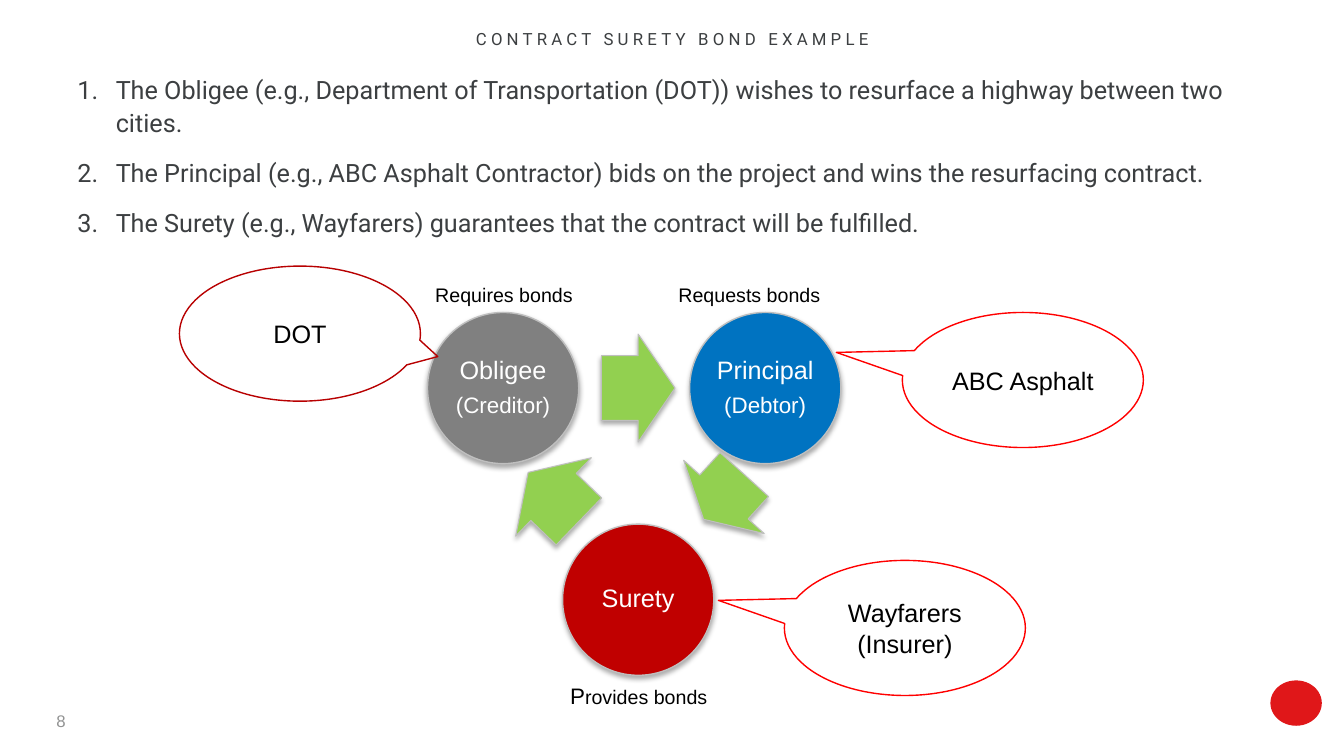
from lxml import etree
from pptx import Presentation
from pptx.dml.color import RGBColor
from pptx.enum.shapes import MSO_SHAPE as Shape
from pptx.enum.text import MSO_ANCHOR as Anchor, MSO_AUTO_SIZE as AutoSize, PP_ALIGN as Align
from pptx.oxml.ns import qn
from pptx.util import Inches, Pt

INK = RGBColor(0x3C, 0x3F, 0x41)
BLACK = RGBColor(0, 0, 0)
WHITE = RGBColor(255, 255, 255)
PAGE_GRAY = RGBColor(0x92, 0x93, 0x93)
RIM = RGBColor(0xBF, 0xBF, 0xBF)
GRAY = RGBColor(0x80, 0x80, 0x80)
BLUE = RGBColor(0x00, 0x73, 0xC1)
RED = RGBColor(0xC0, 0, 0)
GREEN = RGBColor(0x92, 0xD0, 0x50)
BRIGHT_RED = RGBColor(255, 0, 0)
DARK_RED = RGBColor(0xB8, 0, 0x01)
EMBLEM_RED = RGBColor(0xE0, 0x17, 0x19)

# Content
TITLE = "CONTRACT SURETY BOND EXAMPLE"
STEPS = [
    "The Obligee (e.g., Department of Transportation (DOT)) wishes to resurface a highway between two cities.",
    "The Principal (e.g., ABC Asphalt Contractor) bids on the project and wins the resurfacing contract.",
    "The Surety (e.g., Wayfarers) guarantees that the contract will be fulfilled.",
]
PAGE = "8"
# lines, center x, center y, fill
PARTIES = [
    (["Principal", "(Debtor)"], 7.59, 3.85, BLUE),
    (["Surety"], 6.33, 5.95, RED),
    (["Obligee", "(Creditor)"], 4.99, 3.85, GRAY),
]
# center x, center y, length, breadth, direction in degrees
ARROWS = [
    (6.33, 3.85, 0.73, 1.07, 0),
    (7.18, 4.93, 0.6, 1.08, 132.3),
    (5.49, 4.93, 0.7, 1.08, 224),
]
# text, left, top, width, height, alignment
LABELS = [
    ("Requests bonds", 6.63, 2.76, 1.93, 0.34, Align.LEFT),
    ("Provides bonds", 4.84, 6.72, 2.99, 0.37, Align.CENTER),
    ("Requires bonds", 4.19, 2.76, 1.59, 0.34, Align.RIGHT),
]
# lines, left, top, tail offset, outline
CALLOUTS = [
    (["Wayfarers", "(Insurer)"], 7.78, 5.56, (-0.774, -0.204), BRIGHT_RED),
    (["ABC Asphalt"], 8.95, 3.1, (-0.774, -0.204), BRIGHT_RED),
    (["DOT"], 1.78, 2.64, (0.572, 0.17), DARK_RED),
]
DIAMETER = 1.5
CALLOUT_W, CALLOUT_H = 2.39, 1.34

deck = Presentation()
deck.slide_width, deck.slide_height = Inches(13.33), Inches(7.5)
slide = deck.slides.add_slide(deck.slide_layouts[5])


def box(*lengths):
    return [Inches(length) for length in lengths]


def write(frame, lines, size, color, align=Align.LEFT, font="Arial"):
    frame.word_wrap = True
    frame.text = "\n".join(lines)
    for paragraph in frame.paragraphs:
        paragraph.alignment = align
        for run in paragraph.runs:
            run.font.name, run.font.size = font, Pt(size)
            run.font.color.rgb = color


def add_text(place, lines, size, color, align=Align.LEFT, font="Arial"):
    frame = slide.shapes.add_textbox(*box(*place)).text_frame
    write(frame, lines, size, color, align, font)
    return frame


def add_part(kind, center_x, center_y, width, height, fill, line_width):
    """Filled cycle part with a gray rim and a soft shadow below."""
    part = slide.shapes.add_shape(
        kind, *box(center_x - width / 2, center_y - height / 2, width, height))
    part.fill.solid()
    part.fill.fore_color.rgb = fill
    part.line.color.rgb = RIM
    part.line.width = Pt(line_width)
    part.shadow.inherit = False
    effects = part._element.spPr.find(qn("a:effectLst"))
    shadow = etree.SubElement(effects, qn("a:outerShdw"), blurRad=str(Pt(3.5)),
                              dist=str(Pt(2.2)), dir="5400000", rotWithShape="0")
    shade = etree.SubElement(shadow, qn("a:srgbClr"), val="000000")
    etree.SubElement(shade, qn("a:alpha"), val="32000")
    return part


# Title
title = slide.shapes.title
title.left, title.top, title.width, title.height = box(1.42, 0.23, 10.5, 0.3)
title.text_frame.auto_size = AutoSize.NONE
title.text_frame.vertical_anchor = Anchor.TOP
write(title.text_frame, [TITLE], 12, INK, Align.CENTER, "Roboto")
title.text_frame.paragraphs[0].runs[0].font._element.set("spc", "300")

# Numbered steps
steps = add_text((0.67, 0.66, 12, 1.77), STEPS, 18, INK, font="Roboto")
for index, step in enumerate(steps.paragraphs):
    step.line_spacing = 1.1
    if index:
        step.space_before = Pt(12)
    properties = step._p.get_or_add_pPr()
    properties.set("marL", str(Inches(0.38)))
    properties.set("indent", str(-Inches(0.38)))
    etree.SubElement(properties, qn("a:buFont"), typeface="+mj-lt")
    etree.SubElement(properties, qn("a:buAutoNum"), type="arabicPeriod")

# Page number and emblem
page = add_text((0.25, 6.95, 0.5, 0.4), [PAGE], 12, PAGE_GRAY, Align.RIGHT)
page.vertical_anchor = Anchor.MIDDLE
emblem = slide.shapes.add_shape(Shape.OVAL, *box(12.6, 6.75, 0.51, 0.45))
emblem.fill.solid()
emblem.fill.fore_color.rgb = EMBLEM_RED
emblem.line.fill.background()
emblem.shadow.inherit = False

# Cycle of parties
for lines, x, y, fill in PARTIES:
    frame = add_part(Shape.OVAL, x, y, DIAMETER, DIAMETER, fill, 1).text_frame
    frame.margin_left = frame.margin_right = Inches(0.02)
    frame.margin_top = frame.margin_bottom = Inches(0.02)
    frame.vertical_anchor = Anchor.MIDDLE
    write(frame, lines, 18, WHITE, Align.CENTER)
    for paragraph in frame.paragraphs:
        paragraph.line_spacing = 0.9
        paragraph.space_after = Pt(6)
    for role in frame.paragraphs[1:]:
        role.runs[0].font.size = Pt(16)

for x, y, length, breadth, direction in ARROWS:
    arrow = add_part(Shape.RIGHT_ARROW, x, y, length, breadth, GREEN, 0.75)
    arrow.adjustments[0], arrow.adjustments[1] = 0.6, 0.5
    arrow.rotation = direction

# Labels beside the circles
for text, *place, align in LABELS:
    label = add_text(place, [text], 14, BLACK, align)
    if text.startswith("Provides"):
        initial = label.paragraphs[0].runs[0]
        initial.text = text[0]
        initial.font.size = Pt(16)
        rest = label.paragraphs[0].add_run()
        rest.text = text[1:]
        rest.font.name, rest.font.size = "Arial", Pt(14)
        rest.font.color.rgb = BLACK

# Example callouts
for lines, left, top, tail, outline in CALLOUTS:
    callout = slide.shapes.add_shape(
        Shape.OVAL_CALLOUT, *box(left, top, CALLOUT_W, CALLOUT_H))
    callout.adjustments[0], callout.adjustments[1] = tail
    callout.fill.background()
    callout.line.color.rgb = outline
    callout.line.width = Pt(1)
    callout.shadow.inherit = False
    callout.text_frame.vertical_anchor = Anchor.MIDDLE
    write(callout.text_frame, lines, 18, BLACK, Align.CENTER)

deck.save("out.pptx")
